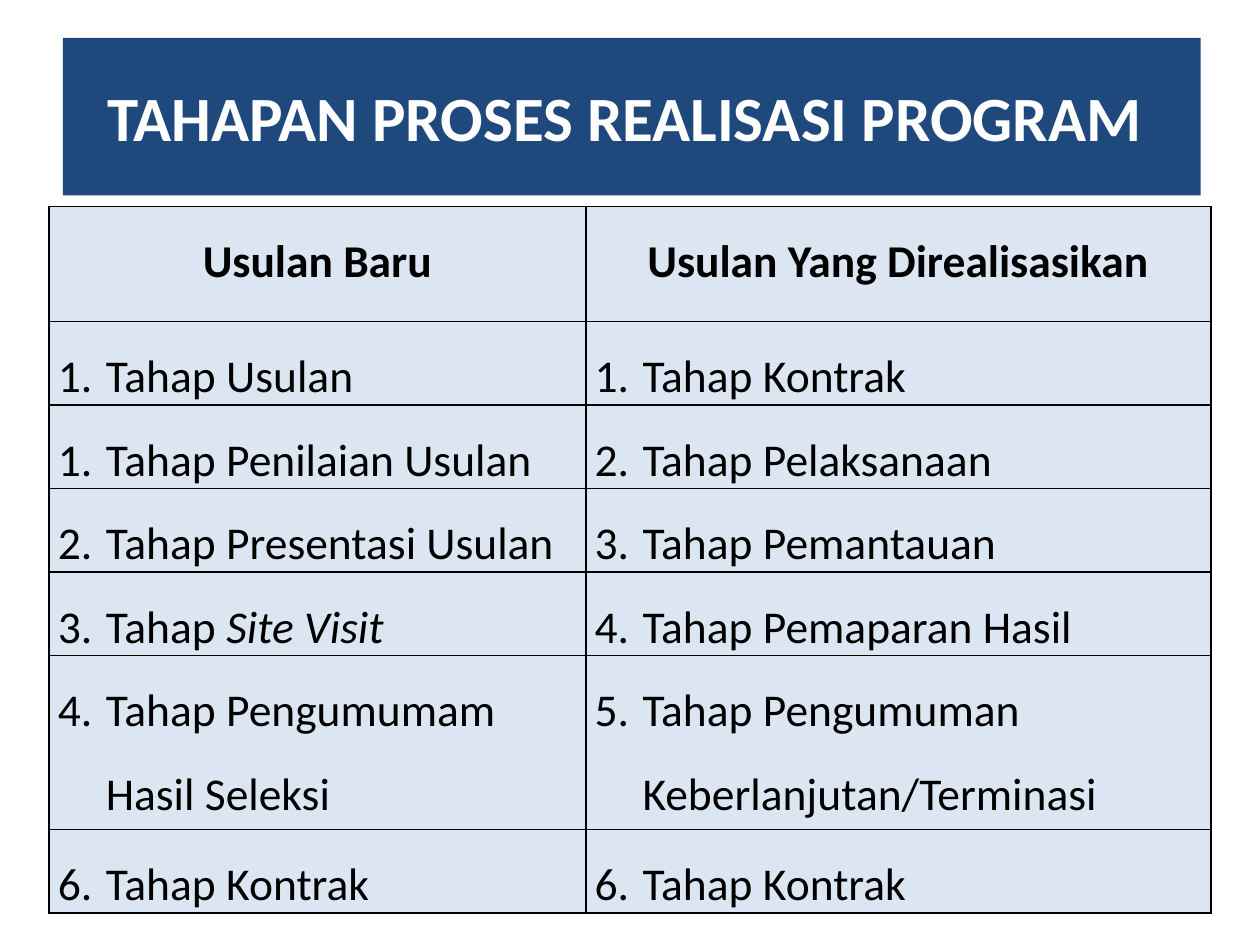
from lxml.etree import SubElement
from pptx import Presentation
from pptx.dml.color import RGBColor
from pptx.enum.shapes import MSO_SHAPE
from pptx.enum.text import MSO_ANCHOR, PP_ALIGN
from pptx.oxml import parse_xml
from pptx.oxml.ns import nsdecls, qn
from pptx.util import Inches, Pt

COLORS = {"banner": "1F497D", "cell": "DCE6F2", "text": "000000",
          "title": "FFFFFF", "border": "000000"}
FONT = "Calibri"

TITLE = "TAHAPAN PROSES REALISASI PROGRAM "
HEADERS = ["Usulan Baru", "Usulan Yang Direalisasikan"]
# Each stage: its number and its text, with an optional italic ending
STAGES = [
    [(1, "Tahap Usulan"), (1, "Tahap Kontrak")],
    [(1, "Tahap Penilaian Usulan"), (2, "Tahap Pelaksanaan")],
    [(2, "Tahap Presentasi Usulan"), (3, "Tahap Pemantauan")],
    [(3, "Tahap ", "Site Visit"), (4, "Tahap Pemaparan Hasil")],
    [(4, "Tahap Pengumumam Hasil Seleksi"),
     (5, "Tahap Pengumuman Keberlanjutan/Terminasi")],
    [(6, "Tahap Kontrak"), (6, "Tahap Kontrak")],
]
COLUMN_WIDTHS = [4.26, 4.96]
ROW_HEIGHTS = [0.91] + [0.65] * 4 + [1.38, 0.65]
WRAPPED_ROW = 5


def add_text(paragraph, text, size=26, color="text", bold=False, italic=False):
    run = paragraph.add_run()
    run.text = text
    run.font.name = FONT
    run.font.size = Pt(size)
    run.font.bold = bold
    run.font.italic = italic
    run.font.color.rgb = RGBColor.from_string(COLORS[color])


def number_paragraph(paragraph, start):
    properties = paragraph._p.get_or_add_pPr()
    properties.set("marL", str(Inches(0.38)))
    properties.set("indent", str(Inches(-0.38)))
    SubElement(properties, qn("a:buFont"), typeface="+mj-lt")
    SubElement(properties, qn("a:buAutoNum"), type="arabicPeriod", startAt=str(start))


class SlideBuilder:
    def __init__(self, presentation):
        self.slide = presentation.slides.add_slide(presentation.slide_layouts[6])

    def banner(self, text, left, top, width, height):
        shape = self.slide.shapes.add_shape(
            MSO_SHAPE.RECTANGLE, Inches(left), Inches(top), Inches(width), Inches(height))
        shape.shadow.inherit = False
        shape.fill.solid()
        shape.fill.fore_color.rgb = RGBColor.from_string(COLORS["banner"])
        shape.line.fill.background()
        shape.text_frame.word_wrap = True
        shape.text_frame.vertical_anchor = MSO_ANCHOR.MIDDLE
        paragraph = shape.text_frame.paragraphs[0]
        paragraph.alignment = PP_ALIGN.CENTER
        add_text(paragraph, text, size=36, color="title", bold=True)

    def table(self, left, top, widths, heights):
        table = self.slide.shapes.add_table(
            len(heights), len(widths), Inches(left), Inches(top),
            Inches(sum(widths)), Inches(sum(heights))).table
        for column, width in zip(table.columns, widths):
            column.width = Inches(width)
        for row, height in zip(table.rows, heights):
            row.height = Inches(height)
        for cell in table.iter_cells():
            self.style_cell(cell)
        return table

    def style_cell(self, cell):
        cell.margin_left = cell.margin_right = Inches(0.07)
        cell.margin_top = cell.margin_bottom = 0
        cell.fill.solid()
        cell.fill.fore_color.rgb = RGBColor.from_string(COLORS["cell"])
        cell.text_frame.paragraphs[0].line_spacing = 1.5
        # Borders come before the fill in the cell properties
        properties = cell._tc.get_or_add_tcPr()
        for index, side in enumerate(("lnL", "lnR", "lnT", "lnB")):
            properties.insert(index, parse_xml(
                f'<a:{side} {nsdecls("a")} w="{Pt(1)}"><a:solidFill>'
                f'<a:srgbClr val="{COLORS["border"]}"/></a:solidFill></a:{side}>'))

    def header_cell(self, cell, text):
        paragraph = cell.text_frame.paragraphs[0]
        paragraph.alignment = PP_ALIGN.CENTER
        add_text(paragraph, text, bold=True)

    def stage_cell(self, cell, number, text, italic_text="", alignment=PP_ALIGN.JUSTIFY):
        paragraph = cell.text_frame.paragraphs[0]
        paragraph.alignment = alignment
        number_paragraph(paragraph, number)
        add_text(paragraph, text)
        if italic_text:
            add_text(paragraph, italic_text, italic=True)


def main():
    presentation = Presentation()
    presentation.slide_width = Inches(10)
    presentation.slide_height = Inches(7.5)
    builder = SlideBuilder(presentation)

    # Title banner
    builder.banner(TITLE, 0.5, 0.3, 9.03, 1.25)

    # Table of stages
    table = builder.table(0.39, 1.64, COLUMN_WIDTHS, ROW_HEIGHTS)
    for column, text in enumerate(HEADERS):
        builder.header_cell(table.cell(0, column), text)
    for row, stages in enumerate(STAGES, start=1):
        alignment = PP_ALIGN.LEFT if row == WRAPPED_ROW else PP_ALIGN.JUSTIFY
        for column, stage in enumerate(stages):
            builder.stage_cell(table.cell(row, column), *stage, alignment=alignment)

    presentation.save("out.pptx")


if __name__ == "__main__":
    main()
